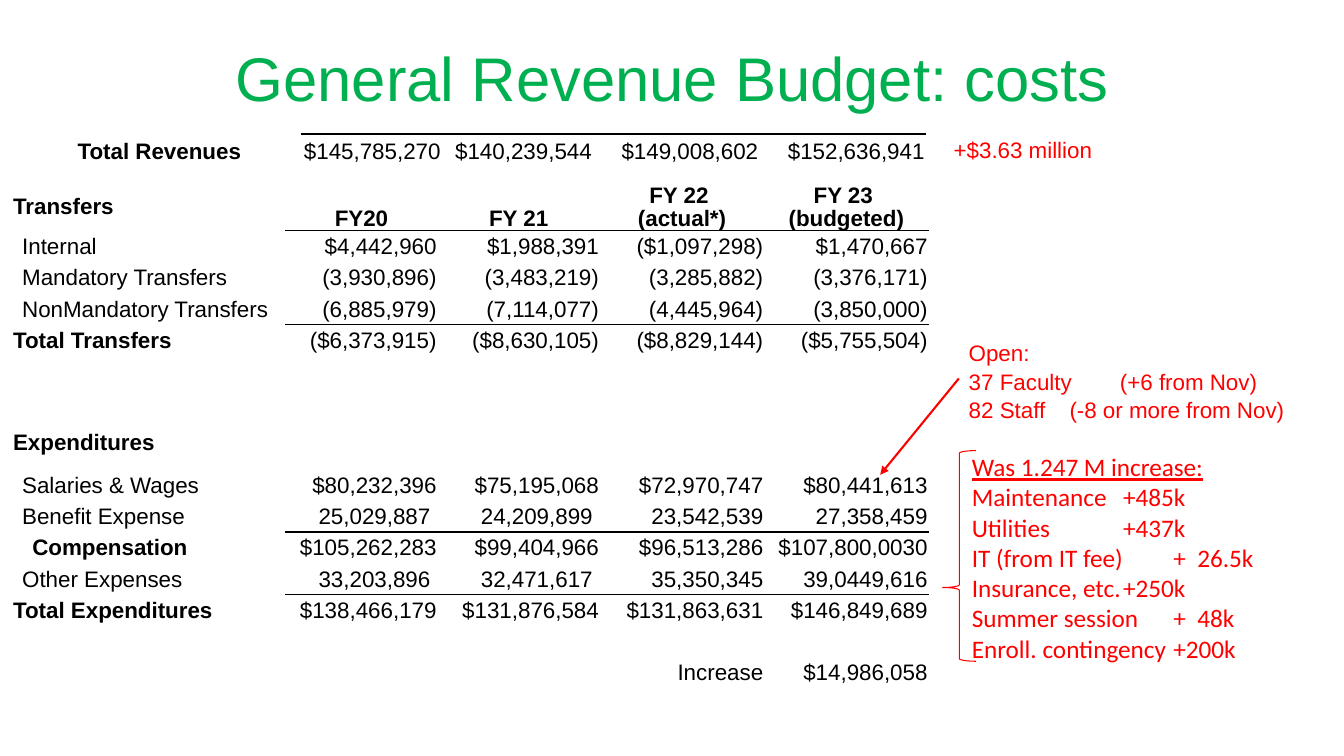
"""Build the slide on general revenue budget costs."""
from dataclasses import dataclass
from typing import Optional

from lxml import etree
from pptx import Presentation
from pptx.dml.color import RGBColor
from pptx.enum.shapes import MSO_CONNECTOR, MSO_SHAPE
from pptx.enum.text import MSO_ANCHOR, MSO_AUTO_SIZE, PP_ALIGN
from pptx.oxml.ns import qn
from pptx.util import Inches, Pt

LEFT, CENTER, RIGHT = PP_ALIGN.LEFT, PP_ALIGN.CENTER, PP_ALIGN.RIGHT
TOP, MIDDLE, BOTTOM = MSO_ANCHOR.TOP, MSO_ANCHOR.MIDDLE, MSO_ANCHOR.BOTTOM
GROW = MSO_AUTO_SIZE.SHAPE_TO_FIT_TEXT
BRACE, STRAIGHT = MSO_SHAPE.LEFT_BRACE, MSO_CONNECTOR.STRAIGHT
PLAIN = "{2D5ABB26-0587-4C30-8999-92F81FD0307C}"


@dataclass(frozen=True)
class Theme:
    ink: str = "000000"
    paper: str = "FFFFFF"
    green: str = "00B050"
    red: str = "FF0000"
    sans: str = "Arial"
    note: str = "Calibri"
    title: int = 44
    large: int = 18
    body: int = 16


THEME = Theme()


@dataclass(frozen=True)
class Row:
    label: str = ""
    sums: tuple[str, ...] = ("", "", "", "")
    inset: float = 0.01
    bold: bool = False
    height: float = 0.31
    rule: Optional[str] = None
    head: bool = False


@dataclass(frozen=True)
class Grid:
    left: float
    top: float
    widths: tuple[float, ...]
    rows: tuple[Row, ...]


@dataclass(frozen=True)
class Note:
    box: tuple[float, float, float, float]
    text: str
    size: int = THEME.body
    font: str = THEME.sans
    color: str = THEME.red
    align: PP_ALIGN = LEFT
    anchor: MSO_ANCHOR = TOP
    space: Optional[float] = None
    under: bool = False


REVENUE = Grid(0.76, 1.33, (2.23, 1.39, 1.5, 1.65, 1.65), (
    Row("Total Revenues", ("$145,785,270", "$140,239,544", "$149,008,602", "$152,636,941"),
        bold=True, height=0.34, rule="a:lnT"),
))
COSTS = Grid(0.12, 1.8, (2.71, 1.51, 1.61, 1.63, 1.63), (
    Row("Transfers", ("FY20", "FY 21", "FY 22 \n(actual*)", "FY 23 \n(budgeted)"),
        bold=True, height=0.49, rule="a:lnB", head=True),
    Row("Internal", ("$4,442,960", "$1,988,391", "($1,097,298)", "$1,470,667"), 0.1),
    Row("Mandatory Transfers", ("(3,930,896)", "(3,483,219)", "(3,285,882)", "(3,376,171)"), 0.1),
    Row("NonMandatory Transfers", ("(6,885,979)", "(7,114,077)", "(4,445,964)", "(3,850,000)"),
        0.1, rule="a:lnB"),
    Row("Total Transfers", ("($6,373,915)", "($8,630,105)", "($8,829,144)", "($5,755,504)"),
        bold=True),
    Row(height=0.59),
    Row("Expenditures", bold=True, height=0.54),
    Row("Salaries & Wages", ("$80,232,396", "$75,195,068", "$72,970,747", "$80,441,613"), 0.1),
    Row("Benefit Expense", ("25,029,887 ", "24,209,899 ", "23,542,539", "27,358,459"),
        0.1, rule="a:lnB"),
    Row("Compensation", ("$105,262,283", "$99,404,966", "$96,513,286", "$107,800,0030"),
        0.2, bold=True),
    Row("Other Expenses", ("33,203,896 ", "32,471,617 ", "35,350,345", "39,0449,616"),
        0.1, rule="a:lnB"),
    Row("Total Expenditures", ("$138,466,179", "$131,876,584", "$131,863,631", "$146,849,689"),
        bold=True),
    Row(),
    Row(sums=("", "", "Increase", "$14,986,058")),
))
TITLE = Note((0.92, 0.08, 11.5, 1.45), "General Revenue Budget: costs", size=THEME.title,
             color=THEME.green, align=CENTER, anchor=MIDDLE, space=0.9)
DETAIL = Note((9.54, 4.43, 3.24, 2.22), (
    "Was 1.247 M increase:\nMaintenance \t+485k\nUtilities\t\t+437k\n"
    "IT (from IT fee)\t+  26.5k\nInsurance, etc.\t+250k\n"
    "Summer session\t+  48k\nEnroll. contingency\t+200k"),
    size=THEME.large, font=THEME.note, under=True)
GAIN = Note((9.36, 1.3, 1.95, 0.37), "+$3.63 million")
OPEN = Note((9.51, 3.3, 3.7, 0.91),
            "Open:\n37 Faculty\t(+6 from Nov)\n82 Staff \t(-8 or more from Nov)", space=1.06)


def write(frame, text: str, *, size: int = THEME.body, font: str = THEME.sans,
          color: str = THEME.ink, bold: bool = False, under: bool = False,
          align: PP_ALIGN = LEFT, space: Optional[float] = None) -> None:
    for index, line in enumerate(text.split("\n")):
        para = frame.add_paragraph() if index else frame.paragraphs[0]
        para.alignment = align
        if space:
            para.line_spacing = space
        if not line:
            para._p.get_or_add_endParaRPr().set("sz", str(size * 100))
            continue
        run = para.add_run()
        run.text = line
        run.font.size, run.font.name = Pt(size), font
        run.font.color.rgb = RGBColor.from_string(color)
        run.font.bold = bold
        run.font.underline = under and index == 0


def draw_rule(cell, side: str) -> None:
    line = etree.Element(qn(side), w=str(Pt(1)))
    fill = etree.SubElement(line, qn("a:solidFill"))
    etree.SubElement(fill, qn("a:srgbClr"), val=THEME.ink)
    cell._tc.get_or_add_tcPr().insert(0, line)


def fill_cell(cell, row: Row, col: int, text: str) -> None:
    cell.margin_left = Inches(row.inset if col == 0 else 0.01)
    cell.margin_right = cell.margin_top = Inches(0.01)
    cell.margin_bottom = 0
    cell.vertical_anchor = BOTTOM if row.head and col else MIDDLE
    cell.fill.solid()
    cell.fill.fore_color.rgb = RGBColor.from_string(THEME.paper)
    side = CENTER if row.head else RIGHT
    write(cell.text_frame, text, bold=row.bold and (col == 0 or row.head),
          align=side if col else LEFT, space=0.93 if row.head and col else None)
    if row.rule and col:
        draw_rule(cell, row.rule)


def draw_grid(slide, grid: Grid) -> None:
    high = sum(row.height for row in grid.rows)
    table = slide.shapes.add_table(
        len(grid.rows), len(grid.widths), Inches(grid.left), Inches(grid.top),
        Inches(sum(grid.widths)), Inches(high)).table
    table.first_row = table.horz_banding = False
    table._tbl.tblPr.find(qn("a:tableStyleId")).text = PLAIN
    for col, width in enumerate(grid.widths):
        table.columns[col].width = Inches(width)
    for index, row in enumerate(grid.rows):
        table.rows[index].height = Inches(row.height)
        for col, text in enumerate((row.label, *row.sums)):
            fill_cell(table.cell(index, col), row, col, text)


def draw_note(slide, note: Note):
    box = slide.shapes.add_textbox(*map(Inches, note.box))
    frame = box.text_frame
    frame.word_wrap = True
    frame.vertical_anchor = note.anchor
    if note.anchor == TOP:
        frame.auto_size = GROW
    write(frame, note.text, size=note.size, font=note.font, color=note.color,
          under=note.under, align=note.align, space=note.space)
    return box


def draw_brace(slide) -> None:
    brace = slide.shapes.add_shape(BRACE, *map(Inches, (9.35, 4.47, 0.33, 2.09)))
    brace.shadow.inherit = False
    brace.adjustments[0], brace.adjustments[1] = 0.08, 0.65
    brace.fill.background()
    brace.line.color.rgb = RGBColor.from_string(THEME.red)
    brace.line.width = Pt(0.75)


def draw_arrow(slide, source) -> None:
    arrow = slide.shapes.add_connector(STRAIGHT, *map(Inches, (9.51, 3.75, 8.73, 4.71)))
    arrow.begin_connect(source, 1)
    arrow.line.color.rgb = RGBColor.from_string(THEME.red)
    arrow.line.width = Pt(1.5)
    etree.SubElement(arrow.line._get_or_add_ln(), qn("a:tailEnd"), type="triangle")
    etree.SubElement(arrow._element.spPr, qn("a:effectLst"))


def main() -> None:
    deck = Presentation()
    deck.slide_width, deck.slide_height = Inches(13.33), Inches(7.5)
    slide = deck.slides.add_slide(deck.slide_layouts[6])
    draw_grid(slide, COSTS)
    draw_note(slide, TITLE)
    draw_note(slide, DETAIL)
    draw_grid(slide, REVENUE)
    draw_note(slide, GAIN)
    draw_brace(slide)
    draw_arrow(slide, draw_note(slide, OPEN))
    deck.save("out.pptx")


if __name__ == "__main__":
    main()
